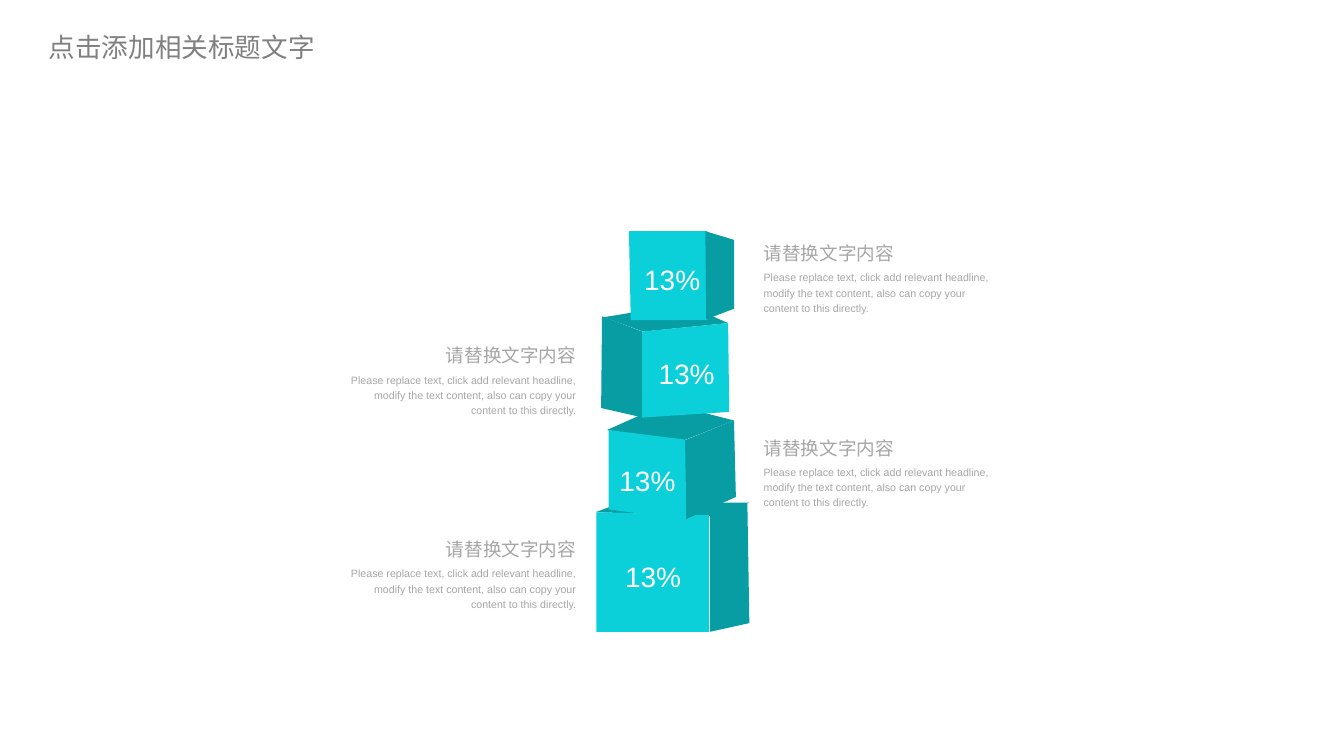
from lxml import etree
from pptx import Presentation
from pptx.dml.color import RGBColor
from pptx.enum.text import MSO_ANCHOR as ANCHOR, MSO_AUTO_SIZE as AUTO, PP_ALIGN as ALIGN
from pptx.oxml.ns import qn
from pptx.util import Pt

COLORS = {"front": "0BD0D9", "shade": "089CA3", "label": "FFFFFF",
          "text": "A6A6A6", "title": "808080"}
CJK_FONT = "Noto Sans CJK SC"
TITLE = "点击添加相关标题文字"
HEADING = "请替换文字内容"
BODY = ("Please replace text, click add relevant headline, modify the text "
        "content, also can copy your content to this directly.")

CUBE_FACES = [
    ("shade", [(448.6, 385.9), (468, 378.7), (564.5, 378.7), (537.1, 388.8)]),
    ("shade", [(535, 388.1), (535, 475.9), (564.5, 469.4), (563, 378.7)]),
    ("front", [(449.3, 385.9), (449.3, 475.9), (534.2, 475.9), (534.2, 388.1)]),
    ("shade", [(457.2, 324), (502.6, 303.8), (553, 316.8), (514.8, 331.9)]),
    ("shade", [(515.5, 331.9), (553, 316.8), (554.4, 374.4), (517, 391)]),
    ("shade", [(455, 239), (515.5, 229), (548.6, 243.4), (484.6, 249.8)]),
    ("shade", [(453.6, 238.3), (483.8, 249.8), (484.6, 314.6), (452.9, 307.4)]),
    ("front", [(548.6, 243.4), (483.8, 249.8), (483.8, 314.6), (549.4, 310.3)]),
    ("front", [(473.8, 174.2), (532.8, 174.2), (532.8, 241.2), (475.2, 241.2)]),
    ("shade", [(531.4, 174.2), (553, 180.7), (553, 232.6), (532.1, 240.5)]),
    ("front", [(458.6, 324), (458.6, 383.8), (517, 391.7), (516.2, 331.2)]),
]
CUBE_LABELS = [(485.3, 193.7), (496.1, 265), (466.6, 344.9), (470.9, 417.6)]
CAPTION_TOPS = [178.9, 255.9, 325.6, 402]
RIGHT_COLUMN_X, LEFT_COLUMN_END = 575.3, 434.2
HEADING_W, BODY_W, BODY_OFFSET = 105.8, 173.5, 23.5


def format_run(r, size, color, font="Arial"):
    r.font.size = Pt(size)
    r.font.name = font
    r.font.color.rgb = RGBColor.from_string(COLORS[color])
    etree.SubElement(r.font._element, qn("a:ea"), typeface=CJK_FONT)


def set_insets(tf, x, y):
    tf.margin_left = tf.margin_right = Pt(x)
    tf.margin_top = tf.margin_bottom = Pt(y)


def add_title(slide):
    sp = slide.shapes.title
    sp.left, sp.top, sp.width, sp.height = Pt(28.8), Pt(20.9), Pt(241.2), Pt(29.5)
    tf = sp.text_frame
    tf.text = TITLE
    tf.auto_size = AUTO.NONE
    tf.vertical_anchor = ANCHOR.MIDDLE
    set_insets(tf, 7.92, 3.6)
    p = tf.paragraphs[0]
    p.alignment = ALIGN.LEFT
    format_run(p.runs[0], 20, "title", CJK_FONT)


def add_face(shapes, color, points):
    corners = [(Pt(x), Pt(y)) for x, y in points]
    builder = shapes.build_freeform(*corners[0])
    builder.add_line_segments(corners[1:], close=True)
    sp = builder.convert_to_shape()
    sp.shadow.inherit = False
    sp.fill.solid()
    sp.fill.fore_color.rgb = RGBColor.from_string(COLORS[color])
    sp.line.fill.background()


def add_text(shapes, text, x, y, w, h, size, color, align=ALIGN.LEFT,
             wrap=True, anchor=ANCHOR.TOP):
    tf = shapes.add_textbox(Pt(x), Pt(y), Pt(w), Pt(h)).text_frame
    tf.text = text
    tf.word_wrap = wrap
    tf.auto_size = AUTO.SHAPE_TO_FIT_TEXT
    tf.vertical_anchor = anchor
    set_insets(tf, 0, 0)
    p = tf.paragraphs[0]
    p.alignment = align
    p.line_spacing = 1.2
    format_run(p.runs[0], size, color)


def add_caption(shapes, y, on_right):
    align = ALIGN.LEFT if on_right else ALIGN.RIGHT
    for text, top, w, h, size in [(BODY, y + BODY_OFFSET, BODY_W, 33.8, 8),
                                  (HEADING, y, HEADING_W, 18.7, 14)]:
        x = RIGHT_COLUMN_X if on_right else LEFT_COLUMN_END - w
        add_text(shapes, text, x, top, w, h, size, "text", align)


def main():
    prs = Presentation()
    prs.slide_width, prs.slide_height = Pt(1012.5), Pt(569.5)
    slide = prs.slides.add_slide(prs.slide_layouts[5])
    add_title(slide)
    tower = slide.shapes.add_group_shape().shapes
    for color, points in CUBE_FACES:
        add_face(tower, color, points)
    for x, y in CUBE_LABELS:
        add_text(tower, "13%", x, y, 42.5, 28.1, 21.1, "label",
                 wrap=False, anchor=ANCHOR.MIDDLE)
    for i, y in enumerate(CAPTION_TOPS):
        add_caption(slide.shapes, y, on_right=i % 2 == 0)
    prs.save("out.pptx")


if __name__ == "__main__":
    main()
